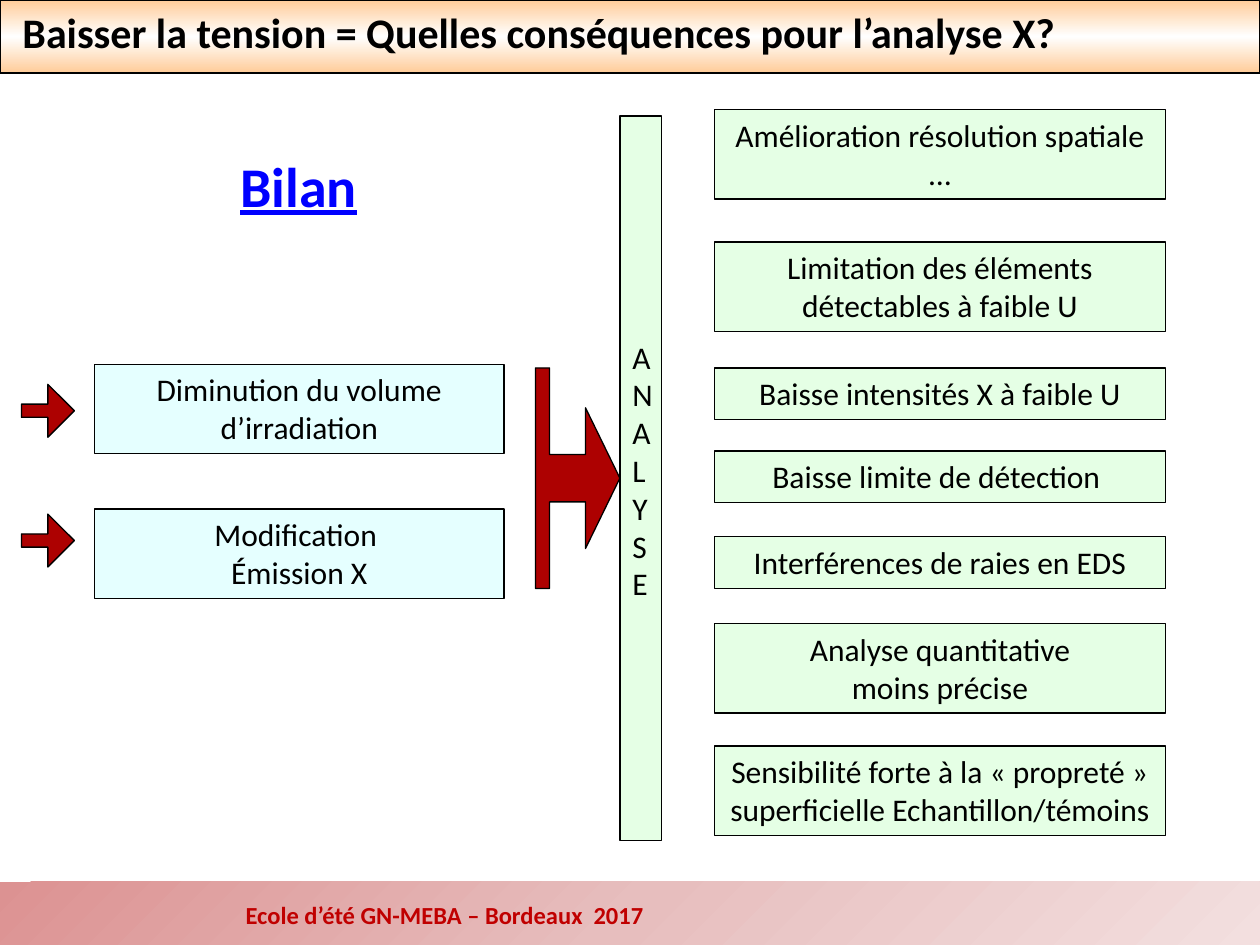
import copy

import lxml.etree
import pptx
import pptx.util
import pptx.dml.color
import pptx.enum.shapes
import pptx.enum.text
import pptx.oxml.ns

Inches = pptx.util.Inches
SHAPES = pptx.enum.shapes.MSO_SHAPE
ALIGN = pptx.enum.text.PP_ALIGN
qn = pptx.oxml.ns.qn


def paint(shape, colors, opacity=100, angle=0, outlined=True):
    """Fill with one colour, or with an even gradient of three."""
    shape.shadow.inherit = False
    rgb = [pptx.dml.color.RGBColor.from_string(color) for color in colors]
    if len(rgb) == 1:
        shape.fill.solid()
        shape.fill.fore_color.rgb = rgb[0]
        if opacity < 100:
            color_node = shape._element.spPr.find(".//" + qn("a:srgbClr"))
            alpha = lxml.etree.SubElement(color_node, qn("a:alpha"))
            alpha.set("val", str(opacity * 1000))
    else:
        shape.fill.gradient()
        shape.fill.gradient_angle = 360 - angle
        stop_list = shape._element.spPr.find(".//" + qn("a:gsLst"))
        stop_list.append(copy.deepcopy(stop_list[-1]))
        for index, stop in enumerate(shape.fill.gradient_stops):
            stop.position = index / 2
            stop.color.rgb = rgb[index]
    if outlined:
        shape.line.color.rgb = pptx.dml.color.RGBColor.from_string("000000")
        shape.line.width = pptx.util.Pt(0.75)
    else:
        shape.line.fill.background()


def write(shape, lines, size=18, color="000000", bold=False, align=ALIGN.CENTER, wrap=True):
    frame = shape.text_frame
    frame.word_wrap = wrap
    frame.vertical_anchor = pptx.enum.text.MSO_ANCHOR.TOP
    frame.text = "\n".join(lines)
    for para in frame.paragraphs:
        para.alignment = align
        para.font.name = "Calibri"
        para.font.size = pptx.util.Pt(size)
        para.font.bold = bold
        para.font.color.rgb = pptx.dml.color.RGBColor.from_string(color)


deck = pptx.Presentation()
deck.slide_width, deck.slide_height = Inches(10), Inches(7.5)
page = deck.slides.add_slide(deck.slide_layouts[6])
shapes = page.shapes

# Footer band
footer = shapes.add_shape(SHAPES.RECTANGLE, 0, Inches(7), Inches(10), Inches(0.5))
paint(footer, ["DC9292", "E7BEBE", "F3DFDF"], angle=45, outlined=False)
footer_text = shapes.add_textbox(Inches(1.85), Inches(7.09), Inches(3.38), Inches(0.34))
write(footer_text, ["Ecole d’été GN-MEBA – Bordeaux  2017"], 14, "C00000", True, ALIGN.LEFT, False)

# Title band
band = shapes.add_shape(SHAPES.RECTANGLE, 0, 0, Inches(10), Inches(0.58))
paint(band, ["FFCC99", "FFFFFF", "FFCC99"], angle=90)
title = shapes.add_textbox(Inches(0.08), 0, Inches(9.89), Inches(0.5))
write(title, ["Baisser la tension = Quelles conséquences pour l’analyse X?"],
      24, bold=True, align=ALIGN.LEFT)

# Heading
heading = shapes.add_textbox(Inches(1.8), Inches(1.15), Inches(1.14), Inches(0.64))
write(heading, ["Bilan"], 32, "0000FF", True, wrap=False)
heading.text_frame.paragraphs[0].font.underline = True

# Causes, each with its small arrow
causes = [
    (2.89, 3.05, ["Diminution du volume d’irradiation"]),
    (4.04, 4.08, ["Modification ", "Émission X"]),
]
for top, arrow_top, lines in causes:
    arrow = shapes.add_shape(SHAPES.RIGHT_ARROW, Inches(0.17), Inches(arrow_top),
                             Inches(0.42), Inches(0.42))
    arrow.adjustments[0] = 0.25
    paint(arrow, ["AD0101"])
    box = shapes.add_shape(SHAPES.RECTANGLE, Inches(0.75), Inches(top), Inches(3.25), Inches(0.71))
    paint(box, ["CCFFFF"], opacity=50)
    write(box, lines)

# Large arrow from causes to analysis
callout = shapes.add_shape(SHAPES.RIGHT_ARROW_CALLOUT, Inches(4.25), Inches(2.92),
                           Inches(0.67), Inches(1.75))
for index, value in enumerate([0.562, 0.834, 0.407, 0.167]):
    callout.adjustments[index] = value
paint(callout, ["AD0101"])

# Analysis column: the narrow box wraps its word letter by letter
column = shapes.add_shape(SHAPES.RECTANGLE, Inches(4.92), Inches(0.92), Inches(0.33), Inches(5.75))
paint(column, ["CCFFCC"], opacity=50)
column_text = shapes.add_textbox(Inches(4.92), Inches(2.63), Inches(0.35), Inches(2.2))
write(column_text, ["ANALYSE"], align=ALIGN.LEFT)

# Consequences
consequences = [
    (0.87, 0.71, ["Amélioration résolution spatiale …"]),
    (1.92, 0.71, ["Limitation des éléments détectables à faible U"]),
    (2.92, 0.41, ["Baisse intensités X à faible U"]),
    (3.58, 0.41, ["Baisse limite de détection "]),
    (4.26, 0.41, ["Interférences de raies en EDS"]),
    (4.95, 0.71, ["Analyse quantitative", "moins précise"]),
    (5.92, 0.71, ["Sensibilité forte à la « propreté » superficielle Echantillon/témoins"]),
]
for top, height, lines in consequences:
    box = shapes.add_shape(SHAPES.RECTANGLE, Inches(5.67), Inches(top), Inches(3.58), Inches(height))
    paint(box, ["CCFFCC"], opacity=50)
    write(box, lines)

deck.save("out.pptx")
